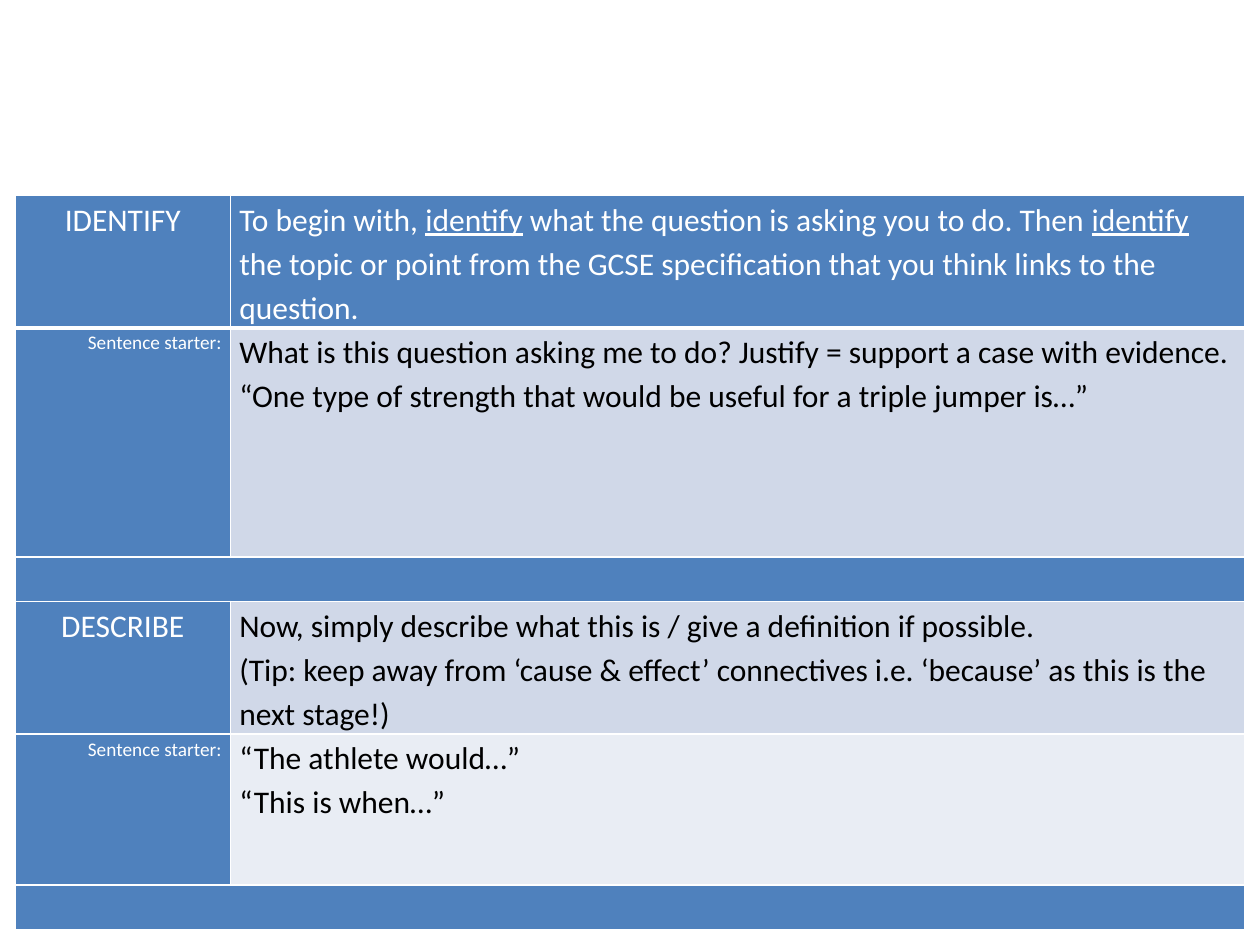
from lxml import etree
from pptx import Presentation
from pptx.dml.color import RGBColor
from pptx.enum.text import PP_ALIGN
from pptx.oxml.ns import qn
from pptx.util import Inches, Pt

COLORS = {
    "blue": "4F81BD",
    "band": "D0D8E8",
    "pale": "E9EDF4",
    "white": "FFFFFF",
    "black": "000000",
}
COLUMN_WIDTHS = [1.71, 8.05]
BAR_HEIGHT = 0.35

# Each paragraph is a list of (text, underlined) runs.
IDENTIFY = [[
    ("To begin with, ", False),
    ("identify", True),
    (" what the question is asking you to do. Then ", False),
    ("identify", True),
    (" the topic or point from the GCSE specification that you think links"
     " to the question.", False),
]]
IDENTIFY_STARTERS = [
    [("What is this question asking me to do? Justify = support a case with evidence.", False)],
    [("“One type of strength that would be useful for a triple jumper is…”", False)],
]
DESCRIBE = [
    [("Now, simply describe what this is / give a definition if possible.", False)],
    [("(Tip: keep away from ‘cause & effect’ connectives i.e. ‘because’ as this is"
      " the next stage!)", False)],
]
DESCRIBE_STARTERS = [
    [("“The athlete would…”", False)],
    [("“This is when…”", False)],
]

# Height, label, paragraphs, fill and text colour; a row without a label is a bar.
ROWS = [
    (1.05, "IDENTIFY", IDENTIFY, "blue", "white"),
    (1.82, "Sentence starter:", IDENTIFY_STARTERS, "band", "black"),
    (BAR_HEIGHT, None, [], "blue", "white"),
    (1.05, "DESCRIBE", DESCRIBE, "band", "black"),
    (1.2, "Sentence starter:", DESCRIBE_STARTERS, "pale", "black"),
    (BAR_HEIGHT, None, [], "blue", "white"),
]


def style_cell(cell, fill, bottom_width):
    """Set the margins, white borders and fill of a cell."""
    cell.margin_left = cell.margin_right = Inches(0.07)
    cell.margin_top = cell.margin_bottom = 0
    properties = cell._tc.get_or_add_tcPr()
    for side, width in (("L", 1), ("R", 1), ("T", 1), ("B", bottom_width)):
        line = etree.SubElement(properties, qn(f"a:ln{side}"), w=str(Pt(width)))
        solid = etree.SubElement(line, qn("a:solidFill"))
        etree.SubElement(solid, qn("a:srgbClr"), val=COLORS["white"])
    cell.fill.solid()
    cell.fill.fore_color.rgb = RGBColor.from_string(COLORS[fill])


def write_cell(cell, paragraphs, color, size=18, align=PP_ALIGN.LEFT):
    frame = cell.text_frame
    for index, runs in enumerate(paragraphs):
        para = frame.add_paragraph() if index else frame.paragraphs[0]
        para.alignment = align
        para.line_spacing = 1.15
        for text, underlined in runs:
            span = para.add_run()
            span.text = text
            span.font.name = "Calibri"
            span.font.size = Pt(size)
            span.font.underline = underlined
            span.font.color.rgb = RGBColor.from_string(COLORS[color])


deck = Presentation()
deck.slide_width, deck.slide_height = Inches(10), Inches(7.5)
page = deck.slides.add_slide(deck.slide_layouts[6])

table = page.shapes.add_table(
    len(ROWS), len(COLUMN_WIDTHS), Inches(0.12), Inches(1.55),
    Inches(sum(COLUMN_WIDTHS)), Inches(sum(row[0] for row in ROWS)),
).table
table.first_row = table.horz_banding = False
for column, width in zip(table.columns, COLUMN_WIDTHS):
    column.width = Inches(width)

for index, (height, label, paragraphs, fill, color) in enumerate(ROWS):
    table.rows[index].height = Inches(height)
    label_cell, text_cell = table.cell(index, 0), table.cell(index, 1)
    bottom_width = 3 if index == 0 else 1
    style_cell(label_cell, "blue", bottom_width)
    style_cell(text_cell, fill, bottom_width)
    if label is None:
        label_cell.merge(text_cell)
        continue
    if label.isupper():
        size, align = 18, PP_ALIGN.CENTER
    else:
        size, align = 11, PP_ALIGN.RIGHT
    write_cell(label_cell, [[(label, False)]], "white", size, align)
    write_cell(text_cell, paragraphs, color)

deck.save("out.pptx")
